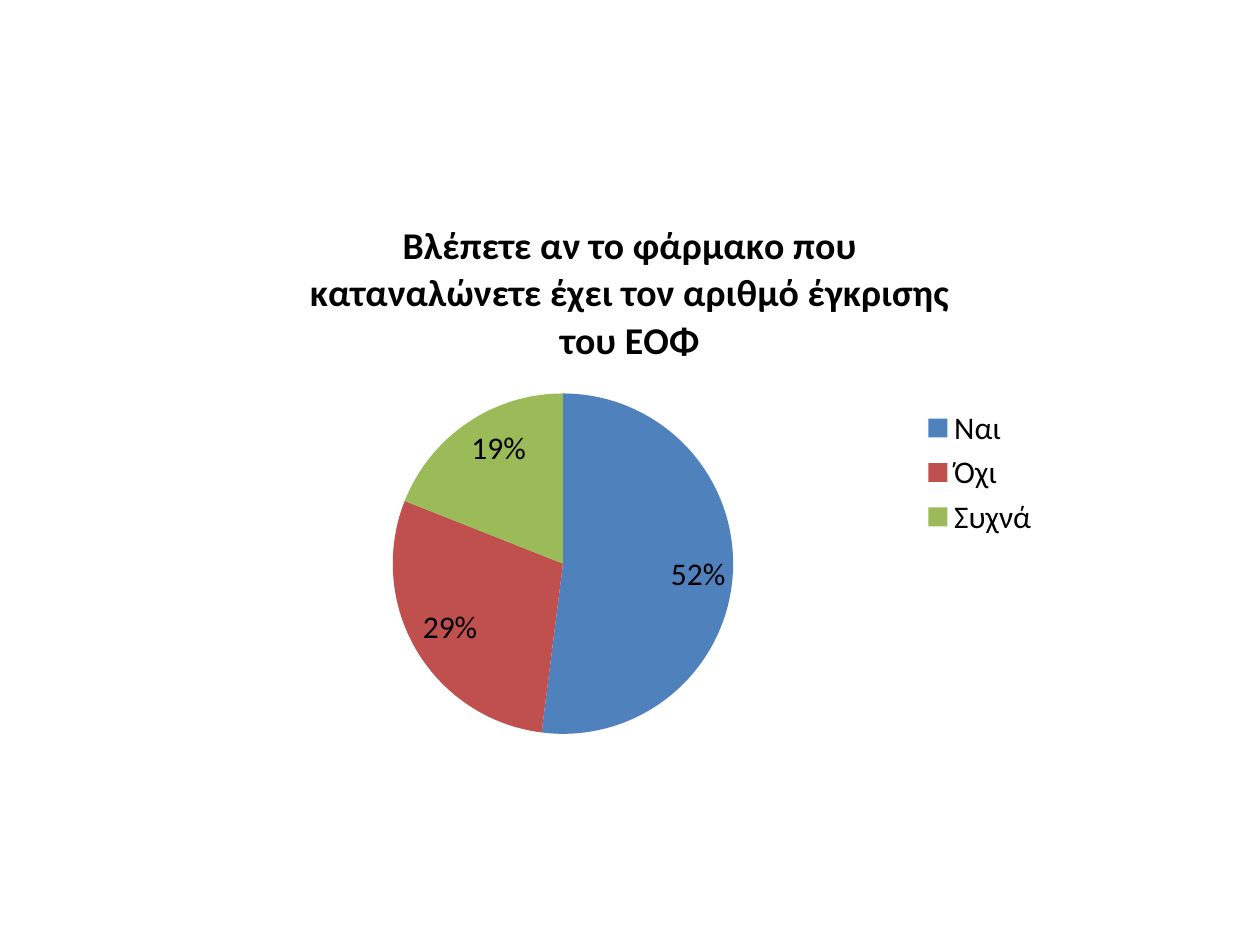
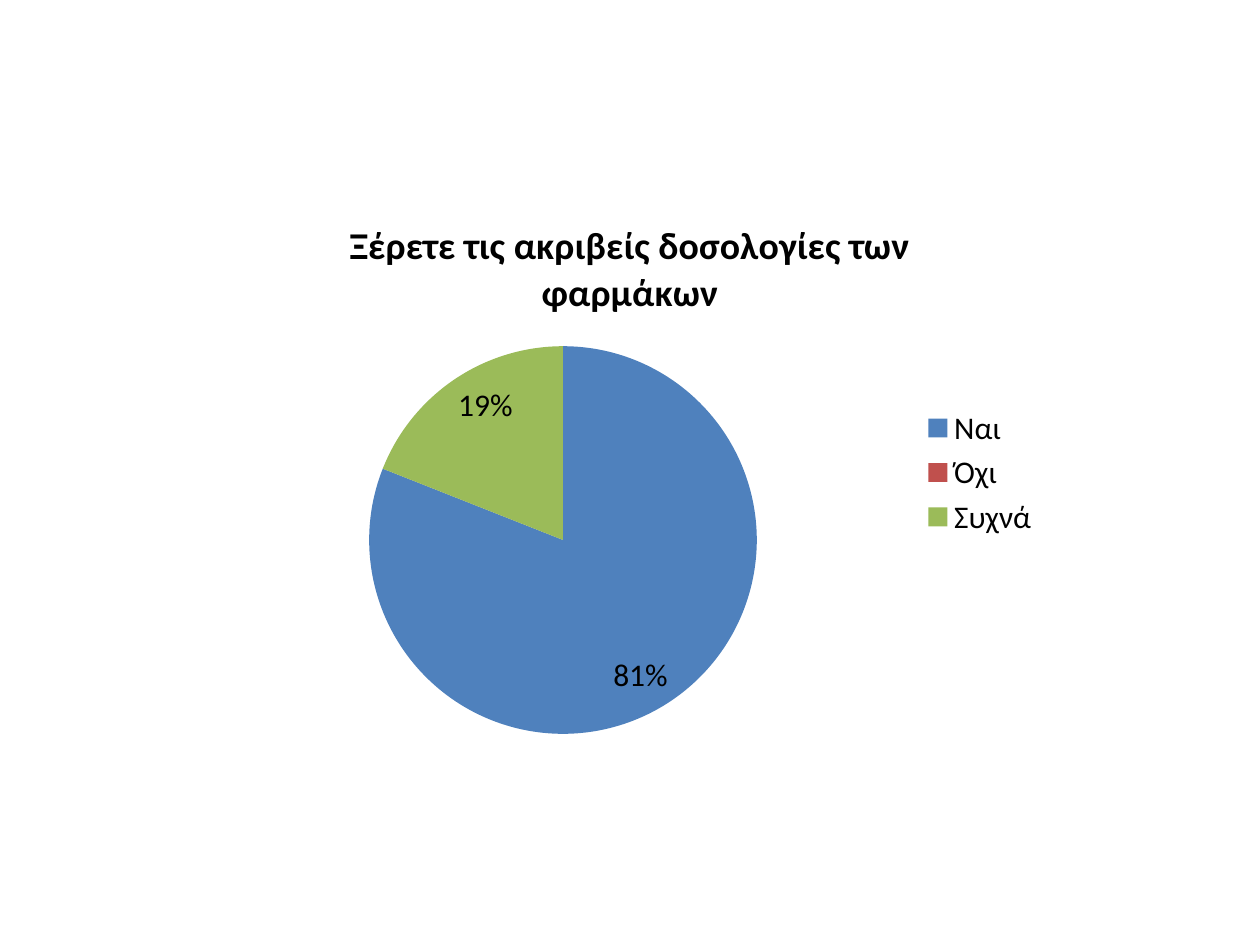
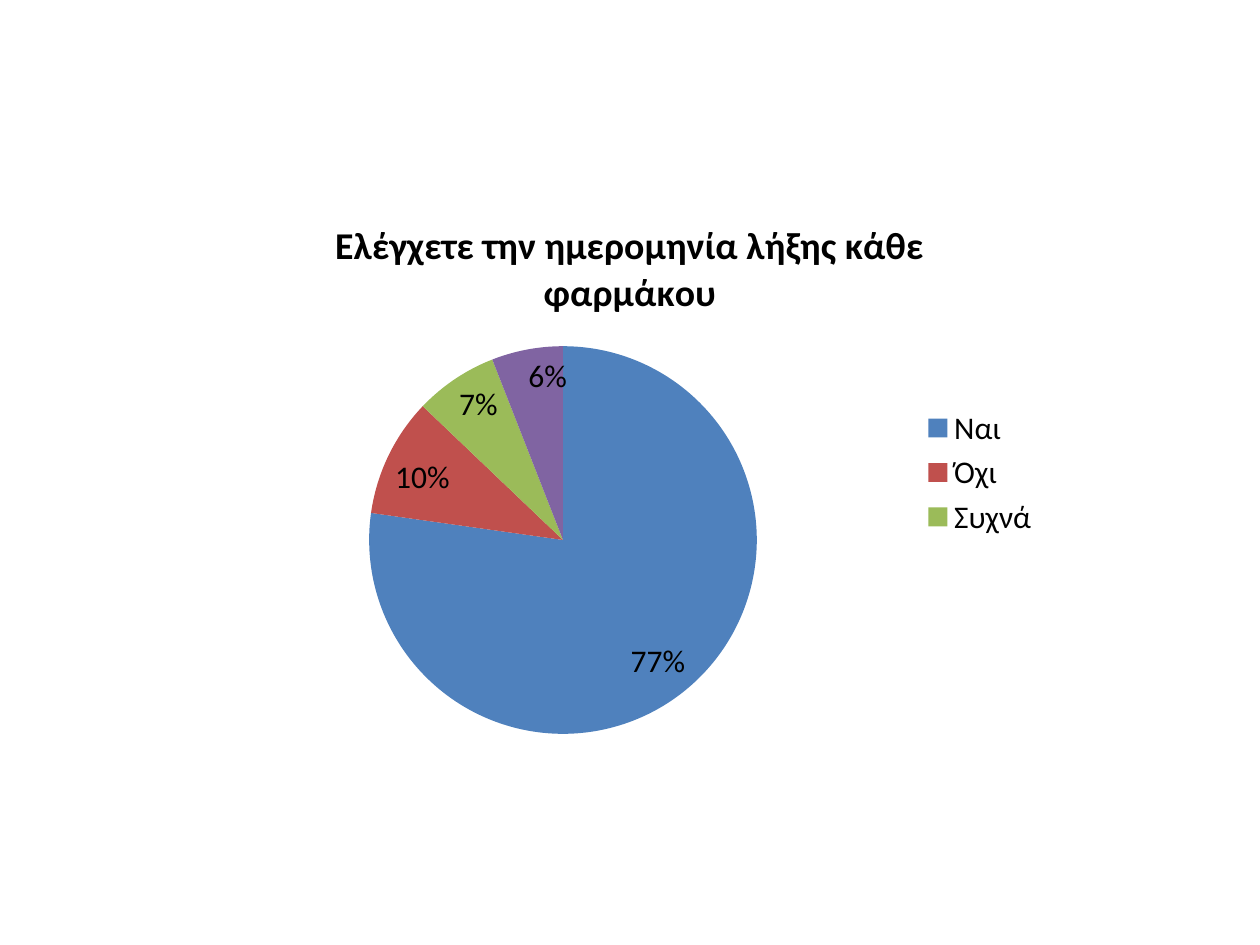
from lxml import etree
from pptx import Presentation
from pptx import util as u
from pptx.chart.data import CategoryChartData
from pptx.chart.point import Point
from pptx.dml.color import RGBColor
from pptx.enum import chart as charts
from pptx.oxml.ns import qn

FONT = "Calibri"
BLACK = RGBColor(0x00, 0x00, 0x00)
BLUE = RGBColor(0x4F, 0x81, 0xBD)
RED = RGBColor(0xC0, 0x50, 0x4D)
GREEN = RGBColor(0x9B, 0xBB, 0x59)
PURPLE = RGBColor(0x80, 0x64, 0xA2)
SLICE_COLORS = (BLUE, RED, GREEN, PURPLE)

SLIDE_WIDTH, SLIDE_HEIGHT = u.Inches(10), u.Inches(7.5)
CHART_WIDTH, CHART_HEIGHT = 0.67, 0.59

ANSWERS = ("Ναι", "Όχι", "Συχνά")
QUESTIONS = (
    ("Βλέπετε αν το φάρμακο που καταναλώνετε έχει τον αριθμό έγκρισης του ΕΟΦ", (52, 29, 19)),
    ("Ξέρετε τις ακριβείς δοσολογίες των φαρμάκων", (81, 0, 19)),
    ("Ελέγχετε την ημερομηνία λήξης κάθε φαρμάκου", (78, 10, 7, 6)),
)


def centred_box(width_share, height_share):
    width, height = int(SLIDE_WIDTH * width_share), int(SLIDE_HEIGHT * height_share)
    return (SLIDE_WIDTH - width) // 2, (SLIDE_HEIGHT - height) // 2, width, height


def format_font(font, size=18, bold=False, color=BLACK):
    font.name = FONT
    font.size = u.Pt(size)
    font.bold = bold
    font.color.rgb = color


def write_text(frame, content, **font_format):
    paragraph = frame.paragraphs[0]
    run = paragraph.add_run()
    run.text = content
    format_font(run.font, **font_format)


def hide_label(labels_xml, position, index):
    label = etree.Element(qn("c:dLbl"))
    etree.SubElement(label, qn("c:idx")).set("val", str(index))
    etree.SubElement(label, qn("c:delete")).set("val", "1")
    labels_xml.insert(position, label)


def label_slices(responses, shares):
    labels = responses.data_labels
    labels.show_percentage = True
    labels.show_value = False
    labels.number_format = "0%"
    labels.number_format_is_linked = False
    labels.position = charts.XL_LABEL_POSITION.INSIDE_END
    format_font(labels.font)
    unchosen = [index for index, share in enumerate(shares) if not share]
    for position, index in enumerate(unchosen):
        hide_label(labels._element, position, index)


def add_question_pie(slide, box, question, shares):
    survey = CategoryChartData(number_format="0")
    survey.categories = ANSWERS
    survey.add_series(question, shares)
    pie = slide.shapes.add_chart(charts.XL_CHART_TYPE.PIE, *box, survey).chart
    format_font(pie.font)

    pie.has_title = True
    write_text(pie.chart_title.text_frame, question, size=21.6, bold=True)
    pie.chart_title.include_in_layout = False

    pie.has_legend = True
    pie.legend.position = charts.XL_LEGEND_POSITION.RIGHT
    pie.legend.include_in_layout = False
    format_font(pie.legend.font)

    plot = pie.plots[0]
    plot.vary_by_categories = True
    responses = plot.series[0]
    for index, color in enumerate(SLICE_COLORS[:len(shares)]):
        fill = Point(responses._element, index).format.fill
        fill.solid()
        fill.fore_color.rgb = color
    label_slices(responses, shares)


def main():
    deck = Presentation()
    deck.slide_width, deck.slide_height = SLIDE_WIDTH, SLIDE_HEIGHT
    blank = deck.slide_layouts[6]
    for question, shares in QUESTIONS:
        slide = deck.slides.add_slide(blank)
        add_question_pie(slide, centred_box(CHART_WIDTH, CHART_HEIGHT), question, shares)
    deck.save("out.pptx")


if __name__ == "__main__":
    main()
